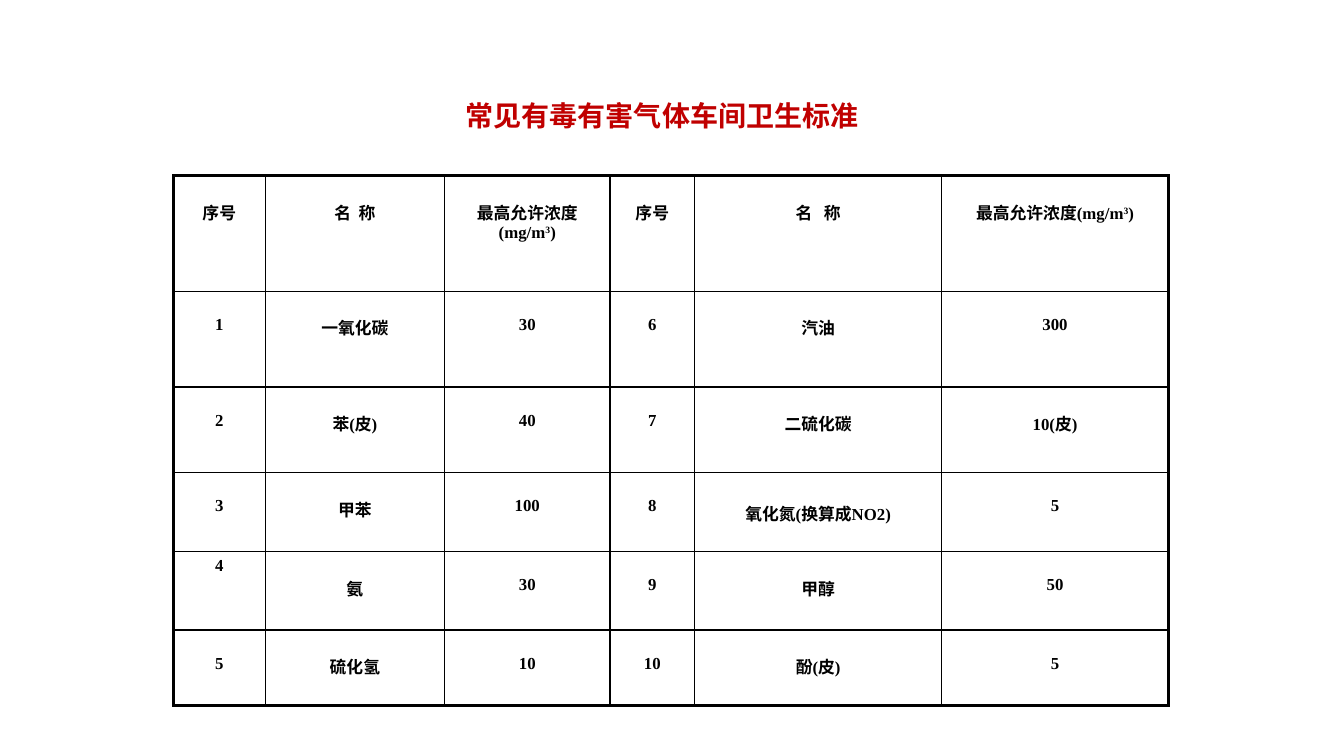
"""Build a slide that tabulates workshop limits for harmful gases."""
from typing import NamedTuple

from lxml.etree import SubElement
from pptx import Presentation as Deck
from pptx.dml.color import RGBColor as Rgb
from pptx.enum.text import PP_ALIGN as Align
from pptx.oxml.ns import qn
from pptx.util import Emu, Pt

SCALE = 9144
BLACK = Rgb(0x00, 0x00, 0x00)
WHITE = Rgb(0xFF, 0xFF, 0xFF)
RED = Rgb(0xC0, 0x00, 0x00)
SERIF = "Times New Roman"
SANS = "Noto Sans CJK SC"
COLS = (91, 178, 164, 84, 245, 225)
ROWS = (115, 95, 85, 78, 78, 75)
HALF = len(COLS) // 2
PAD = 24
PADS = {(3, 4): 28, (4, 0): 5}


class Box(NamedTuple):
    """Place and size in px."""
    left: int
    top: int
    width: int
    height: int


class Gas(NamedTuple):
    """Number, name and limit of one gas, or their headings."""
    num: str
    name: str
    limit: str


LEFT = (
    Gas("序号", "名  称", "最高允许浓度(mg/m^3)"),
    Gas("1", "一氧化碳", "30"),
    Gas("2", "苯(皮)", "40"),
    Gas("3", "甲苯", "100"),
    Gas("4", "氨", "30"),
    Gas("5", "硫化氢", "10"),
)
RIGHT = (
    Gas("序号", "名   称", "最高允许浓度(mg/m^3)"),
    Gas("6", "汽油", "300"),
    Gas("7", "二硫化碳", "10(皮)"),
    Gas("8", "氧化氮(换算成NO2)", "5"),
    Gas("9", "甲醇", "50"),
    Gas("10", "酚(皮)", "5"),
)
TITLE = Box(452, 97, 648, 69)
GRID = Box(172, 174, sum(COLS), sum(ROWS))


def px(size: int) -> Emu:
    """Turn px into EMU."""
    return Emu(size * SCALE)


def style(para, size: int, face: str, color: Rgb) -> None:
    """Set the bold font of a paragraph."""
    font = para.font
    font.size, font.name, font.bold = Pt(size), face, True
    font.color.rgb = color


def write(para, text: str) -> None:
    """Add text, raising the one sign that follows a caret."""
    base, caret, rest = text.partition("^")
    para.add_run().text = base
    if caret:
        power = para.add_run()
        power.text = rest[0]
        power.font._element.set("baseline", "30000")
        para.add_run().text = rest[1:]


def edge(cell, side: str, thick: bool) -> None:
    """Draw one border of a cell."""
    props = cell._tc.get_or_add_tcPr()
    line = SubElement(props, qn(f"a:ln{side}"), w=str(Pt(2 if thick else 1)))
    fill = SubElement(line, qn("a:solidFill"))
    SubElement(fill, qn("a:srgbClr"), val=str(BLACK))


def draw_cell(cell, row: int, col: int, text: str) -> None:
    """Fill, frame and label one cell."""
    edge(cell, "L", col % HALF == 0)
    edge(cell, "R", col % HALF == HALF - 1)
    edge(cell, "T", row == 0)
    edge(cell, "B", row == len(ROWS) - 1)
    cell.fill.solid()
    cell.fill.fore_color.rgb = WHITE
    cell.margin_top = px(PADS.get((row, col), PAD))
    para = cell.text_frame.paragraphs[0]
    para.alignment = Align.CENTER
    style(para, 12, SERIF, BLACK)
    write(para, text)


def draw_title(slide, box: Box, text: str) -> None:
    """Add the slide title."""
    frame = slide.shapes.add_textbox(*map(px, box)).text_frame
    frame.word_wrap = True
    para = frame.paragraphs[0]
    para.line_spacing = 0.9
    style(para, 20, SANS, RED)
    write(para, text)


def draw_table(slide, box: Box) -> None:
    """Add the table of gases, two to a row."""
    shape = slide.shapes.add_table(len(ROWS), len(COLS), *map(px, box))
    table = shape.table
    table.first_row = table.horz_banding = False
    for col, width in zip(table.columns, COLS):
        col.width = px(width)
    for row, height in zip(table.rows, ROWS):
        row.height = px(height)
    for row, (one, two) in enumerate(zip(LEFT, RIGHT)):
        for col, text in enumerate(one + two):
            draw_cell(table.cell(row, col), row, col, text)


def main() -> None:
    """Build and save the deck."""
    deck = Deck()
    deck.slide_width, deck.slide_height = px(1333), px(750)
    slide = deck.slides.add_slide(deck.slide_layouts[6])
    draw_title(slide, TITLE, "常见有毒有害气体车间卫生标准")
    draw_table(slide, GRID)
    deck.save("out.pptx")


if __name__ == "__main__":
    main()
